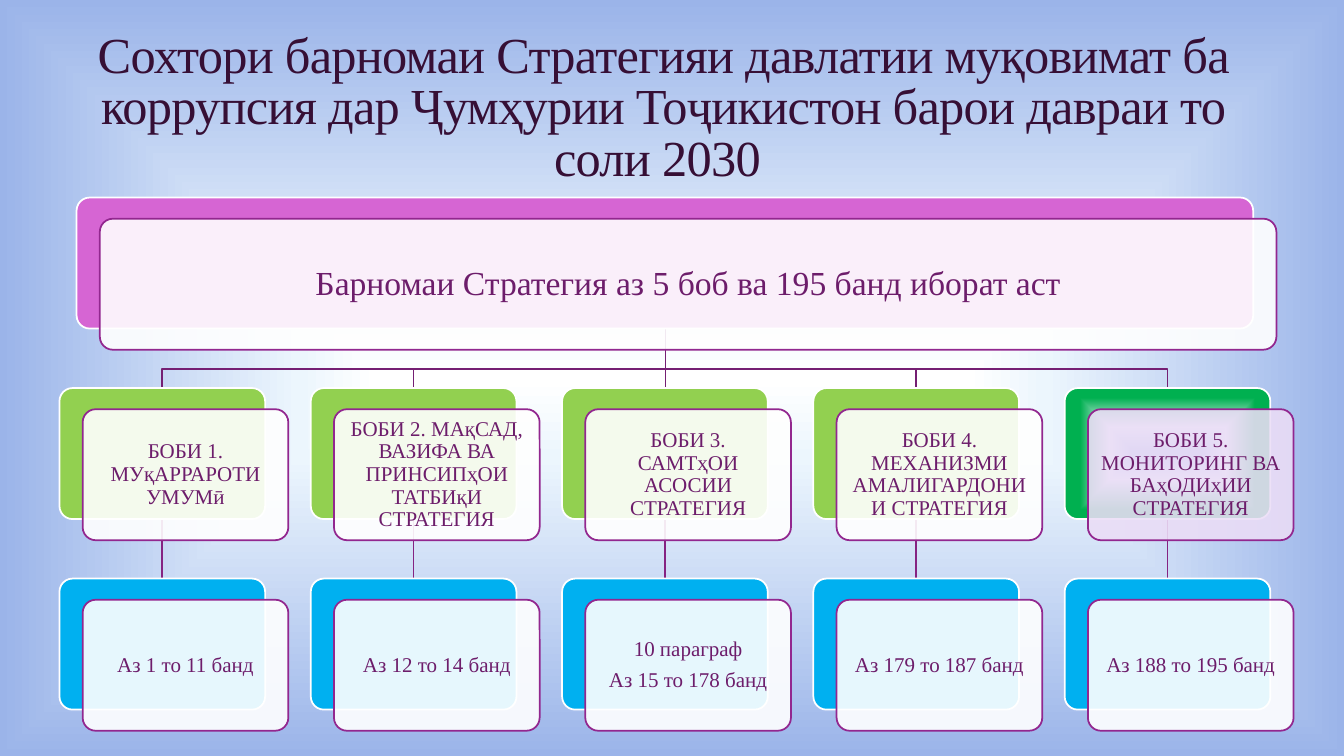
"""Builds a slide with the five-chapter structure of the anti-corruption strategy."""
from lxml import etree
from pptx import Presentation
from pptx.dml.color import RGBColor
from pptx.enum.shapes import MSO_CONNECTOR, MSO_SHAPE
from pptx.enum.text import MSO_ANCHOR, PP_ALIGN
from pptx.oxml import parse_xml
from pptx.oxml.ns import nsdecls, qn
from pptx.util import Inches, Pt

WHITE = RGBColor(0xFF, 0xFF, 0xFF)
ICE = RGBColor(0xEC, 0xF6, 0xFD)
PERIWINKLE = RGBColor(0x9B, 0xB4, 0xE9)
PLUM = RGBColor(0x36, 0x0F, 0x35)
TEXT_PURPLE = RGBColor(0x6D, 0x1D, 0x6B)
CARD_PURPLE = RGBColor(0x92, 0x27, 0x8F)
BRANCH_PURPLE = RGBColor(0x75, 0x1F, 0x73)
STEM_PURPLE = RGBColor(0x85, 0x23, 0x82)
ORCHID = RGBColor(0xD6, 0x65, 0xD3)
LILAC = RGBColor(0xEB, 0xDD, 0xF6)
LIME = RGBColor(0x92, 0xD0, 0x50)
GREEN = RGBColor(0x00, 0xB0, 0x50)
SKY = RGBColor(0x00, 0xB0, 0xF0)

FONT = "Times New Roman"
CARD_WIDTH, CARD_HEIGHT = 2.04, 1.3
FIRST_LEFT, LAST_LEFT = 0.59, 10.56
ROOT_CENTER, ROOT_BOTTOM, BUS_TOP = 6.6, 3.26, 3.66
CHAPTER_TOP, RANGE_TOP = 3.85, 5.74

CHAPTERS = [
    ("БОБИ 1. МУқАРРАРОТИ УМУМӣ", ["Аз 1 то 11 банд"]),
    ("БОБИ 2. МАқСАД, ВАЗИФА ВА ПРИНСИПҳОИ ТАТБИқИ СТРАТЕГИЯ", ["Аз 12 то 14 банд"]),
    ("БОБИ 3.\vСАМТҳОИ АСОСИИ СТРАТЕГИЯ", ["10 параграф", "Аз 15 то 178 банд"]),
    ("БОБИ 4. МЕХАНИЗМИ АМАЛИГАРДОНИИ СТРАТЕГИЯ", ["Аз 179 то 187 банд"]),
    ("БОБИ 5. МОНИТОРИНГ ВА БАҳОДИҳИИ СТРАТЕГИЯ", ["Аз 188 то 195 банд"]),
]

deck = Presentation()
deck.slide_width, deck.slide_height = Inches(13.33), Inches(7.5)
page = deck.slides.add_slide(deck.slide_layouts[6])


def write_text(box, lines, size, color, margin, spacing, anchor):
    frame = box.text_frame
    settings = {"word_wrap": True, "vertical_anchor": anchor}
    settings.update({f"margin_{side}": Inches(margin) for side in ("left", "right", "top", "bottom")})
    for name, value in settings.items():
        setattr(frame, name, value)
    frame.text = "\n".join(lines)
    for index, para in enumerate(frame.paragraphs):
        para.alignment = PP_ALIGN.CENTER
        para.line_spacing = spacing
        para.space_before = Pt(size * 0.35 if index else 0)
        for name, value in {"name": FONT, "size": Pt(size)}.items():
            setattr(para.font, name, value)
        for span in para.runs:
            span.font.name, span.font.size = FONT, Pt(size)
            span.font.color.rgb = color


def add_card(left, top, width, back_color, lines, size, margin, front_color=WHITE, opacity=90):
    layers = [(0, 0, back_color, WHITE), (0.23, 0.21, front_color, CARD_PURPLE)]
    for shift_x, shift_y, color, outline in layers:
        box = page.shapes.add_shape(
            MSO_SHAPE.ROUNDED_RECTANGLE, Inches(left + shift_x), Inches(top + shift_y),
            Inches(width), Inches(CARD_HEIGHT))
        box.adjustments[0] = 0.1
        box.shadow.inherit = False
        box.fill.solid()
        box.fill.fore_color.rgb = color
        box.line.color.rgb = outline
        box.line.width = Pt(1.25)
        if shift_x:
            tint = box.fill._xPr.find(qn("a:solidFill"))[0]
            etree.SubElement(tint, qn("a:alpha"), val=str(opacity * 1000))
            write_text(box, lines, size, TEXT_PURPLE, margin, 0.9, MSO_ANCHOR.MIDDLE)
        else:
            back = box
    return back


title = page.shapes.add_textbox(Inches(0.46), Inches(0.44), Inches(12.24), Inches(1.46))
write_text(title, ["Сохтори барномаи Стратегияи давлатии муқовимат ба коррупсия дар "
                   "Ҷумҳурии Тоҷикистон барои давраи то соли 2030 "],
           36, PLUM, 0.05, 0.85, MSO_ANCHOR.BOTTOM)
title.text_frame.paragraphs[0].runs[0].font._element.set("spc", "-50")

step = (LAST_LEFT - FIRST_LEFT) / (len(CHAPTERS) - 1)
lefts = [FIRST_LEFT + step * index for index in range(len(CHAPTERS))]
straight_lines = [(ROOT_CENTER, ROOT_BOTTOM, CHAPTER_TOP, BRANCH_PURPLE)]
for index, left in enumerate(lefts):
    center = left + CARD_WIDTH / 2
    straight_lines.append((center, CHAPTER_TOP + CARD_HEIGHT, RANGE_TOP, STEM_PURPLE))
    if index != len(CHAPTERS) // 2:
        builder = page.shapes.build_freeform(Inches(ROOT_CENTER), Inches(ROOT_BOTTOM))
        corners = [(ROOT_CENTER, BUS_TOP), (center, BUS_TOP), (center, CHAPTER_TOP)]
        builder.add_line_segments([(Inches(x), Inches(y)) for x, y in corners], close=False)
        branch = builder.convert_to_shape()
        branch.shadow.inherit = False
        branch.fill.background()
        branch.line.color.rgb = BRANCH_PURPLE
        branch.line.width = Pt(1.25)

for center, top, bottom, color in straight_lines:
    stem = page.shapes.add_connector(
        MSO_CONNECTOR.STRAIGHT, Inches(center), Inches(top), Inches(center), Inches(bottom))
    stem.line.color.rgb = color
    stem.line.width = Pt(1.25)
    etree.SubElement(stem._element.spPr, qn("a:effectLst"))

add_card(0.76, 1.96, 11.67, ORCHID, ["Барномаи Стратегия аз 5 боб ва 195 банд иборат аст"], 24, 0.1)
for left, (chapter, ranges) in zip(lefts, CHAPTERS):
    is_last = left == lefts[-1]
    front_color, opacity = (LILAC, 88) if is_last else (WHITE, 90)
    chapter_back = add_card(left, CHAPTER_TOP, CARD_WIDTH, LIME, [chapter], 15, 0.06, front_color, opacity)
    add_card(left, RANGE_TOP, CARD_WIDTH, SKY, ranges, 15, 0.06)

gradients = [
    (page.background.fill, [(0, WHITE), (21, ICE), (100, PERIWINKLE)]),
    (chapter_back.fill, [(3, PERIWINKLE), (40, ICE), (85, GREEN)]),
]
for fill, stops in gradients:
    fill.gradient()
    gradient = fill._xPr.find(qn("a:gradFill"))
    stop_xml = "".join(
        f'<a:gs pos="{position * 1000}"><a:srgbClr val="{color}"/></a:gs>' for position, color in stops)
    gradient.getparent().replace(gradient, parse_xml(
        f'<a:gradFill {nsdecls("a")} rotWithShape="1"><a:gsLst>{stop_xml}</a:gsLst><a:path path="shape">'
        '<a:fillToRect l="50000" t="50000" r="50000" b="50000"/></a:path></a:gradFill>'))

deck.save("out.pptx")
